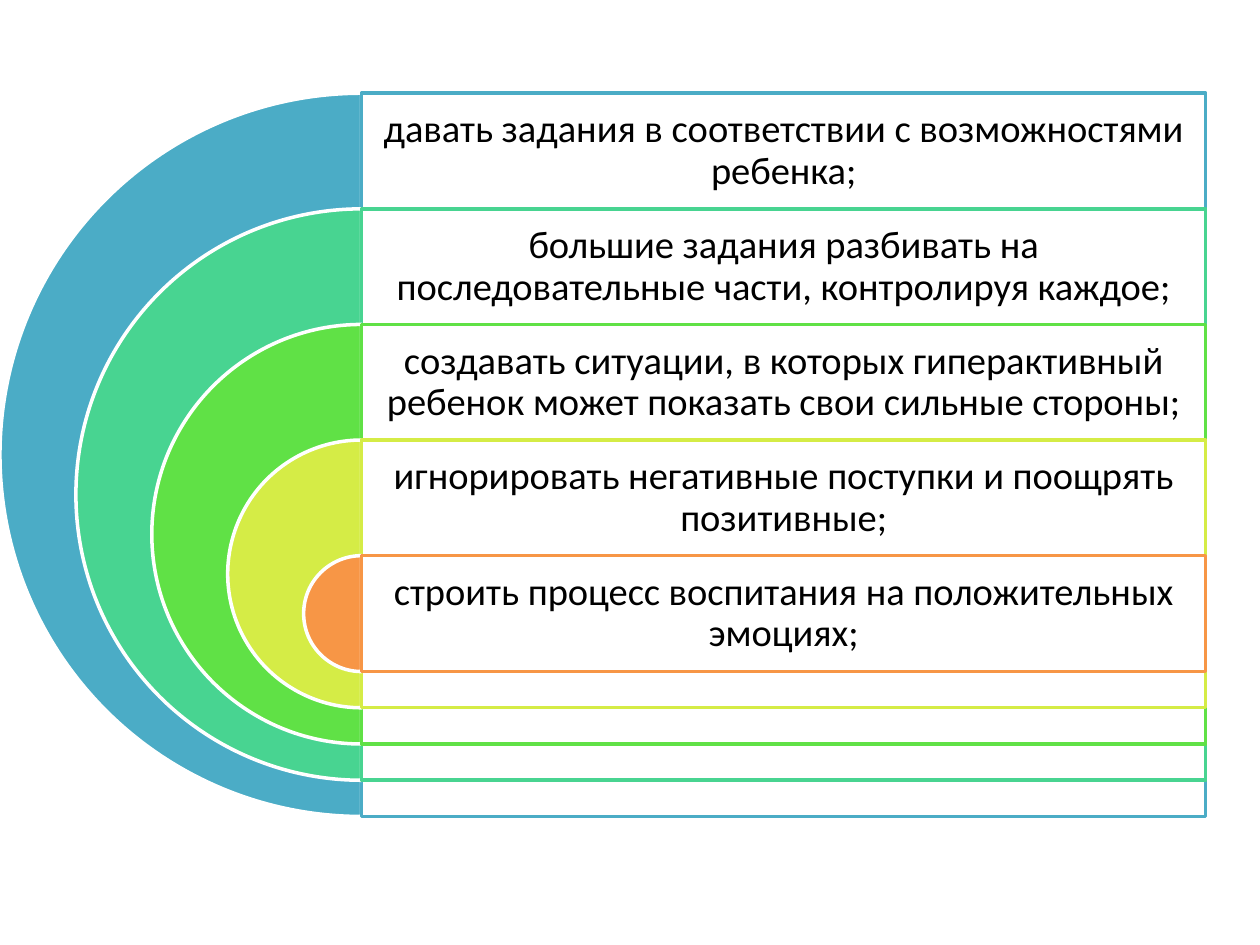
from pptx import Presentation
from pptx.dml.color import RGBColor
from pptx.enum.shapes import MSO_SHAPE
from pptx.enum.text import MSO_ANCHOR, PP_ALIGN
from pptx.oxml.ns import qn
from pptx.util import Inches, Pt
from lxml import etree

PIE, RECTANGLE = MSO_SHAPE.PIE, MSO_SHAPE.RECTANGLE
MIDDLE, CENTER = MSO_ANCHOR.MIDDLE, PP_ALIGN.CENTER

WHITE = RGBColor(0xFF, 0xFF, 0xFF)
BLACK = RGBColor(0x00, 0x00, 0x00)
BLUE = RGBColor(0x4B, 0xAC, 0xC6)
TEAL = RGBColor(0x48, 0xD4, 0x91)
GREEN = RGBColor(0x60, 0xE1, 0x46)
YELLOW = RGBColor(0xD5, 0xEC, 0x46)
ORANGE = RGBColor(0xF7, 0x96, 0x46)

ADVICE = [
    (BLUE, "давать задания в соответствии с возможностями ребенка;"),
    (TEAL, "большие задания разбивать на последовательные части, контролируя каждое;"),
    (GREEN, "создавать ситуации, в которых гиперактивный ребенок может показать свои сильные стороны;"),
    (YELLOW, "игнорировать негативные поступки и поощрять позитивные;"),
    (ORANGE, "строить процесс воспитания на положительных эмоциях;"),
]
ROW_HEIGHT = Inches(0.92)


def add_outlined_shape(group, kind, bounds, fill, line):
    shape = group.shapes.add_shape(kind, *bounds)
    shape.shadow.inherit = False
    shape.fill.solid()
    shape.fill.fore_color.rgb = fill
    shape.line.color.rgb = line
    shape.line.width = Pt(2)
    return shape


def add_half_disc(group, bounds, color):
    disc = add_outlined_shape(group, PIE, bounds, color, WHITE)
    disc.adjustments[0] = 54  # 90 degrees
    disc.adjustments[1] = 162  # 270 degrees


def add_panel(group, bounds, color):
    panel = add_outlined_shape(group, RECTANGLE, bounds, WHITE, color)
    fill_color = panel.fill._xPr.find(qn("a:solidFill"))[0]
    etree.SubElement(fill_color, qn("a:alpha")).set("val", "90000")


def add_label(group, bounds, text):
    label = group.shapes.add_textbox(*bounds)
    frame = label.text_frame
    frame.word_wrap = True
    frame.vertical_anchor = MIDDLE
    frame.margin_left = frame.margin_right = Inches(0.09)
    frame.margin_top = frame.margin_bottom = Inches(0.09)
    frame.text = text
    para = frame.paragraphs[0]
    para.alignment = CENTER
    para.line_spacing = 0.9
    font = para.runs[0].font
    font.name = "Calibri"
    font.size = Pt(22)
    font.color.rgb = BLACK


def add_nested_targets(page, left, top, width, height, items):
    """Nest half discs so that each one starts a row lower than the one around it."""
    group = page.shapes.add_group_shape()
    center = left + height // 2
    last = len(items) - 1
    row_step = (Inches(4.41) - top) // last
    shrink = (height - ROW_HEIGHT) // last
    panel_width = left + width - center
    for index, (color, text) in enumerate(items):
        row_top = top + index * row_step
        diameter = height - index * shrink
        add_half_disc(group, (center - diameter // 2, row_top, diameter, diameter), color)
        add_panel(group, (center, row_top, panel_width, diameter), color)
        add_label(group, (center, row_top, panel_width, ROW_HEIGHT), text)


def main():
    deck = Presentation()
    deck.slide_width, deck.slide_height = Inches(10), Inches(7.5)
    page = deck.slides.add_slide(deck.slide_layouts[6])
    add_nested_targets(page, Inches(0), Inches(0.74), Inches(9.57), Inches(5.74), ADVICE)
    deck.save("out.pptx")


if __name__ == "__main__":
    main()
